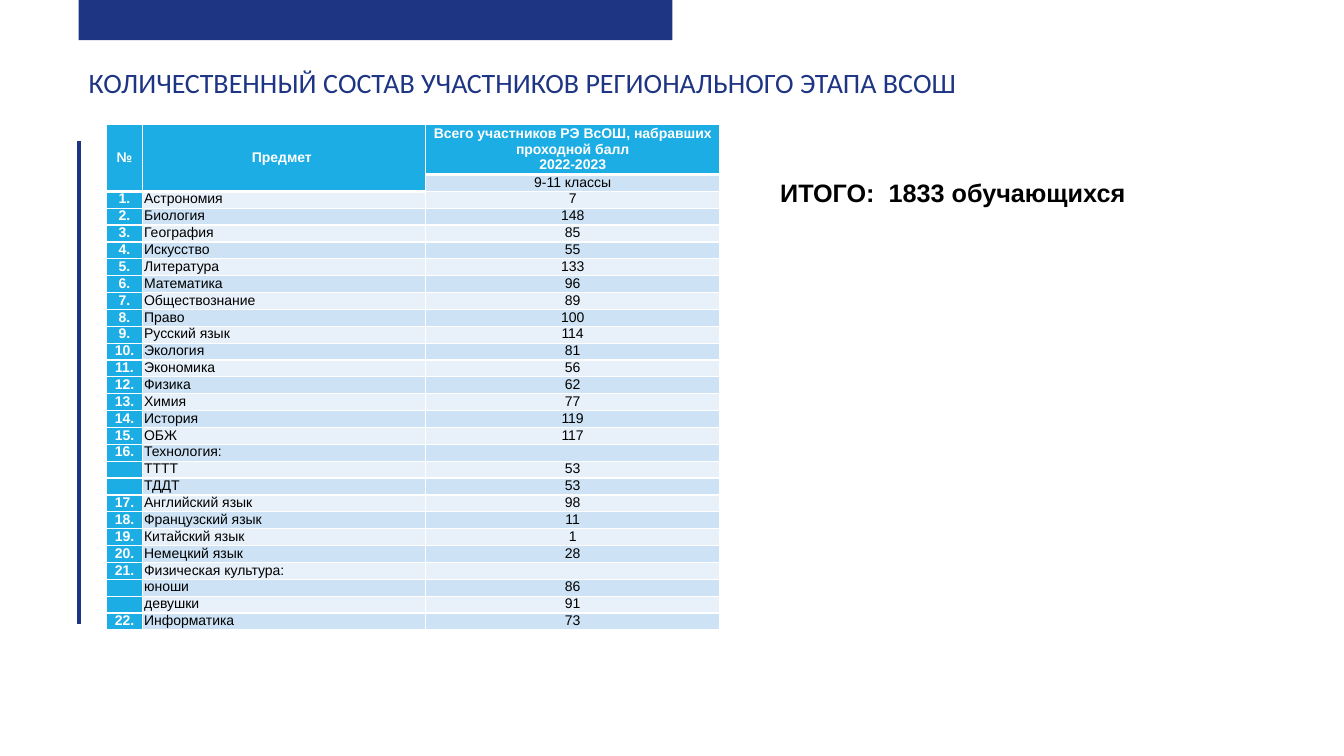
from typing import NamedTuple

from lxml.etree import SubElement
from pptx import Presentation
from pptx.dml.color import RGBColor
from pptx.enum.shapes import MSO_CONNECTOR, MSO_SHAPE
from pptx.enum.text import MSO_ANCHOR, MSO_AUTO_SIZE, PP_ALIGN
from pptx.oxml.ns import qn
from pptx.util import Inches, Pt

NAVY, CYAN, WHITE, BLACK = "1E3584", "1CADE4", "FFFFFF", "000000"
BANDS = ("CDE3F5", "E8F1FA")
WIDTHS = (0.35, 2.81, 2.92)
HIGH, HEAD = 5, 0.48


class Row(NamedTuple):
    name: str
    count: str = ""
    sub: bool = False


class Look(NamedTuple):
    fill: str
    color: str = BLACK
    bold: bool = False
    align: PP_ALIGN = PP_ALIGN.CENTER
    base: float = 1


ROWS = (
    Row("Астрономия", "7"),
    Row("Биология", "148"),
    Row("География", "85"),
    Row("Искусство", "55"),
    Row("Литература", "133"),
    Row("Математика", "96"),
    Row("Обществознание", "89"),
    Row("Право", "100"),
    Row("Русский язык", "114"),
    Row("Экология", "81"),
    Row("Экономика", "56"),
    Row("Физика", "62"),
    Row("Химия", "77"),
    Row("История", "119"),
    Row("ОБЖ", "117"),
    Row("Технология:"),
    Row("ТТТТ", "53", True),
    Row("ТДДТ", "53", True),
    Row("Английский язык", "98"),
    Row("Французский язык", "11"),
    Row("Китайский язык", "1"),
    Row("Немецкий язык", "28"),
    Row("Физическая культура:"),
    Row("юноши", "86", True),
    Row("девушки", "91", True),
    Row("Информатика", "73"),
)


def rgb(color: str) -> RGBColor:
    return RGBColor.from_string(color)


def style(para, face: str, size: float, color: str, bold: bool = False) -> None:
    font = para.font
    font.name, font.size, font.bold = face, Pt(size), bold
    font.color.rgb = rgb(color)


def edge(cell, base: float) -> None:
    """Draw white cell borders with the given bottom width."""
    props = cell._tc.get_or_add_tcPr()
    sides = (("a:lnL", 1), ("a:lnR", 1), ("a:lnT", 1), ("a:lnB", base))
    for spot, (tag, width) in enumerate(sides):
        line = SubElement(props, qn(tag), w=str(Pt(width)))
        fill = SubElement(line, qn("a:solidFill"))
        SubElement(fill, qn("a:srgbClr"), val=WHITE)
        props.insert(spot, line)


def put(cell, text: str, look: Look) -> None:
    cell.margin_left = cell.margin_right = Inches(0.02)
    cell.margin_top = cell.margin_bottom = 0
    cell.fill.solid()
    cell.fill.fore_color.rgb = rgb(look.fill)
    edge(cell, look.base)
    cell.text = text
    for para in cell.text_frame.paragraphs:
        para.alignment = look.align
        style(para, "Arial", 10, look.color, look.bold)
        if not text:
            SubElement(para._p, qn("a:endParaRPr"), sz="1000")


def grid(slide) -> None:
    left, top = Inches(1.06), Inches(1.23)
    frame = slide.shapes.add_table(len(ROWS) + 2, len(WIDTHS), left, top,
                                   Inches(sum(WIDTHS)), Inches(HIGH))
    table = frame.table
    table.first_row = table.horz_banding = False
    for col, width in zip(table.columns, WIDTHS):
        col.width = Inches(width)
    step = (HIGH - HEAD) / (len(ROWS) + 1)
    for num, row in enumerate(table.rows):
        row.height = Inches(step if num else HEAD)

    # Header
    heads = ("№", "Предмет ",
             "Всего участников РЭ ВсОШ, набравших проходной балл\n2022-2023")
    for col, text in enumerate(heads):
        cell = table.cell(0, col)
        if col < 2:
            cell.merge(table.cell(1, col))
        put(cell, text, Look(CYAN, WHITE, True, base=3))
        cell.vertical_anchor = MSO_ANCHOR.MIDDLE
    put(table.cell(1, 2), "9-11 классы", Look(BANDS[0]))

    # Subjects
    count = 0
    for num, row in enumerate(ROWS, 2):
        count += not row.sub
        band = BANDS[(num + 1) % 2]
        mark = "" if row.sub else f"{count}."
        put(table.cell(num, 0), mark, Look(CYAN, WHITE, True))
        put(table.cell(num, 1), row.name, Look(band, align=PP_ALIGN.LEFT))
        put(table.cell(num, 2), row.count, Look(band))


def main() -> None:
    deck = Presentation()
    deck.slide_width, deck.slide_height = Inches(13.33), Inches(7.5)
    slide = deck.slides.add_slide(deck.slide_layouts[5])
    shapes = slide.shapes

    # Top bar
    bar = shapes.add_shape(MSO_SHAPE.RECTANGLE, Inches(0.78), 0,
                           Inches(5.89), Inches(0.4))
    bar.shadow.inherit = False
    bar.fill.solid()
    bar.fill.fore_color.rgb = rgb(NAVY)
    bar.line.fill.background()

    # Side line
    side = shapes.add_connector(MSO_CONNECTOR.STRAIGHT, Inches(0.78),
                                Inches(6.19), Inches(0.78), Inches(1.4))
    side.line.color.rgb = rgb(NAVY)
    side.line.width = Pt(3)
    SubElement(side._element.spPr, qn("a:effectLst"))

    # Title
    title = shapes.title
    title.left, title.top = Inches(0.78), Inches(0.6)
    title.width, title.height = Inches(10.98), Inches(0.44)
    title.text = "КОЛИЧЕСТВЕННЫЙ СОСТАВ УЧАСТНИКОВ РЕГИОНАЛЬНОГО ЭТАПА ВСОШ"
    title.text_frame.auto_size = MSO_AUTO_SIZE.SHAPE_TO_FIT_TEXT
    para = title.text_frame.paragraphs[0]
    para.alignment = PP_ALIGN.LEFT
    style(para, "Calibri", 20, NAVY)

    grid(slide)

    # Total
    total = shapes.add_textbox(Inches(7.64), Inches(1.71),
                               Inches(3.66), Inches(0.4)).text_frame
    total.auto_size = MSO_AUTO_SIZE.SHAPE_TO_FIT_TEXT
    total.word_wrap = False
    total.text = "ИТОГО:  1833 обучающихся"
    style(total.paragraphs[0], "Arial", 18, BLACK, True)

    deck.save("out.pptx")


if __name__ == "__main__":
    main()
